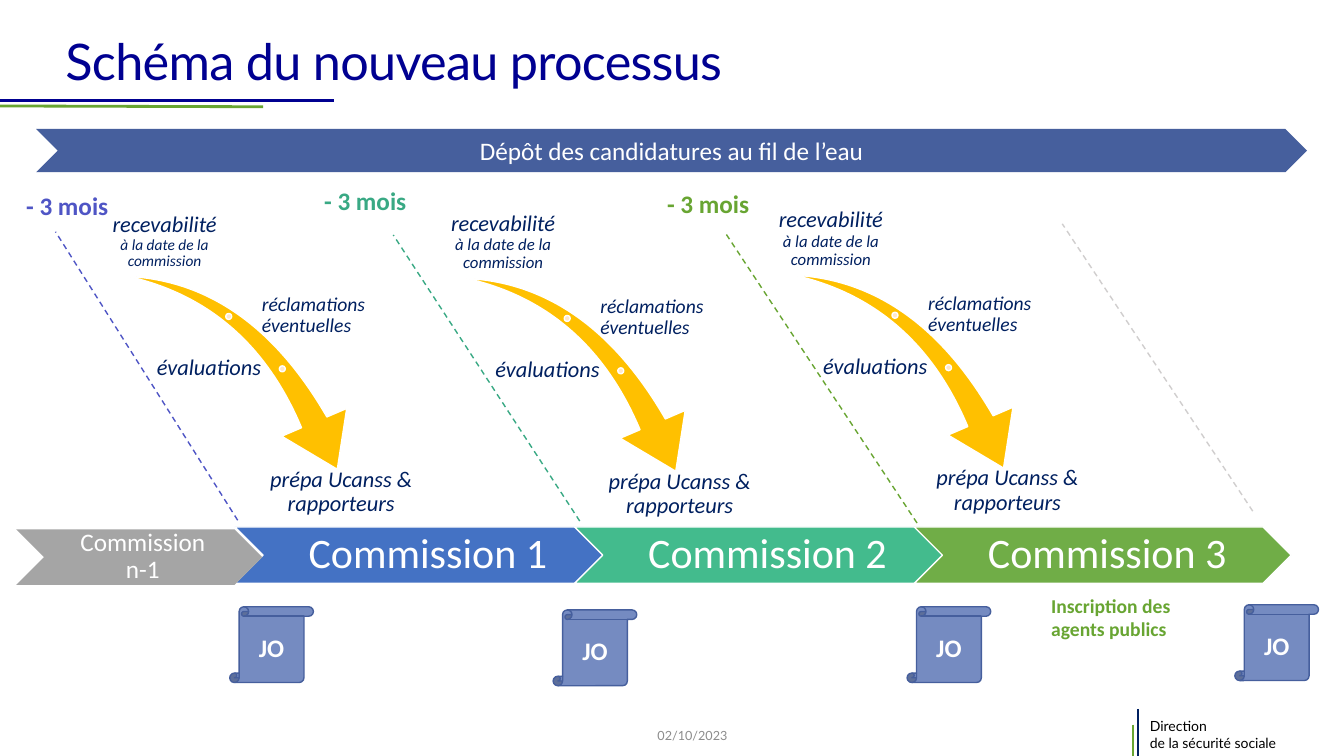
import dataclasses

import lxml.etree
import pptx
import pptx.dml.color
import pptx.enum.dml
import pptx.enum.shapes
import pptx.enum.text
import pptx.oxml.ns
import pptx.util

Cm = pptx.util.Cm
Pt = pptx.util.Pt
SHAPE = pptx.enum.shapes.MSO_SHAPE
ALIGN = pptx.enum.text.PP_ALIGN
ANCHOR = pptx.enum.text.MSO_ANCHOR


@dataclasses.dataclass(frozen=True)
class Theme:
    heading_font: str = "Lato"
    body_font: str = "Calibri"
    white: str = "FFFFFF"
    black: str = "000000"
    title: str = "000091"
    navy: str = "002060"
    green: str = "68A532"
    indigo: str = "4F55C5"
    teal: str = "39A984"
    pale_grey: str = "D0CECE"
    date_grey: str = "8C8C8C"
    past_grey: str = "A5A5A5"
    banner: str = "465F9D"
    scroll: str = "758BC1"
    swoosh: str = "FFC000"
    dot: str = "FFE8CC"
    commissions: tuple = ("4472C4", "43BB8D", "70AD47")
    title_size: float = 36
    commission_size: float = 30
    label_size: float = 18
    step_size: float = 16
    note_size: float = 14
    footer_size: float = 10
    date_size: float = 9


def rgb(value):
    return pptx.dml.color.RGBColor.from_string(value)


class Board:
    """Draws on one page, or on a group of it; all lengths are in centimetres."""

    def __init__(self, theme, page, shapes=None):
        self.theme = theme
        self.page = page
        self.shapes = shapes or page.shapes

    def group(self):
        return Board(self.theme, self.page, self.page.shapes.add_group_shape().shapes)

    def fill_text(self, shape, paragraphs, color, align=ALIGN.LEFT, anchor=ANCHOR.TOP,
                  insets=(0.25, 0.13, 0.25, 0.13), spacing=None, font=None,
                  bold=None, italic=None):
        """Fill a shape with paragraphs, each a list of (text, size) runs."""
        frame = shape.text_frame
        frame.word_wrap = True
        frame.auto_size = pptx.enum.text.MSO_AUTO_SIZE.NONE
        frame.vertical_anchor = anchor
        (frame.margin_left, frame.margin_top,
         frame.margin_right, frame.margin_bottom) = map(Cm, insets)
        for index, runs in enumerate(paragraphs):
            para = frame.add_paragraph() if index else frame.paragraphs[0]
            para.alignment = align
            para.line_spacing = spacing
            for text, size in runs:
                span = para.add_run()
                span.text = text
                span.font.name = font or self.theme.body_font
                span.font.size = Pt(size)
                span.font.bold = bold
                span.font.italic = italic
                span.font.color.rgb = rgb(color)

    def title(self, text, *place):
        box = self.page.shapes.title
        box.left, box.top, box.width, box.height = map(Cm, place)
        self.fill_text(box, [[(text, self.theme.title_size)]], self.theme.title,
                       anchor=ANCHOR.MIDDLE, spacing=0.9, font=self.theme.heading_font)
        box.text_frame.paragraphs[0].runs[0].font._element.set("spc", "-50")

    def text(self, place, paragraphs, color, **style):
        box = self.shapes.add_textbox(*map(Cm, place))
        self.fill_text(box, paragraphs, color, **style)

    def shape(self, kind, place, fill, outline=None):
        shape = self.shapes.add_shape(kind, *map(Cm, place))
        shape.shadow.inherit = False
        shape.fill.solid()
        shape.fill.fore_color.rgb = rgb(fill)
        if outline:
            shape.line.color.rgb = rgb(outline)
            shape.line.width = Pt(1)
        else:
            shape.line.fill.background()
        return shape

    def line(self, ends, color, width=1, dashed=False):
        connector = self.shapes.add_connector(
            pptx.enum.shapes.MSO_CONNECTOR.STRAIGHT, *map(Cm, ends))
        connector.line.color.rgb = rgb(color)
        connector.line.width = Pt(width)
        if dashed:
            connector.line.dash_style = pptx.enum.dml.MSO_LINE.DASH
        lxml.etree.SubElement(connector._element.spPr, pptx.oxml.ns.qn("a:effectLst"))

    def chevron(self, place, label, size, fill, outline=None,
                insets=(0.33, 0.1, 0.1, 0.1), spacing=0.9):
        shape = self.shape(SHAPE.CHEVRON, place, fill, outline)
        self.fill_text(shape, [[(label, size)]], self.theme.white, align=ALIGN.CENTER,
                       anchor=ANCHOR.MIDDLE, insets=insets, spacing=spacing)

    def scroll(self, left, top):
        shape = self.shape(SHAPE.VERTICAL_SCROLL, (left, top, 2.11, 1.91),
                           self.theme.scroll, self.theme.banner)
        self.fill_text(shape, [[("JO", self.theme.label_size)]], self.theme.white,
                       align=ALIGN.CENTER, anchor=ANCHOR.MIDDLE, bold=True)

    def preparation(self, left, top, detail_size):
        """Swoosh arrow with the four steps that lead to a commission."""
        theme = self.theme
        part = self.group()
        arrow = part.shape(SHAPE.SWOOSH_ARROW, (left, top, 6.17, 4.32),
                           theme.swoosh, theme.white)
        arrow.adjustments[0], arrow.adjustments[1] = 0.16, 0.31
        arrow.rotation = 73.3
        for across, down in ((2.59, 0.76), (3.94, 2.08)):
            part.shape(SHAPE.OVAL, (left + across, top + down, 0.15, 0.15),
                       theme.dot, theme.white)
        steps = (
            (-0.41, -1.42, 2.92, ALIGN.CENTER, ANCHOR.BOTTOM,
             [("recevabilité ", theme.step_size),
              ("à la date de la commission", detail_size)]),
            (3.45, 0.25, 4.01, ALIGN.LEFT, ANCHOR.MIDDLE,
             [("réclamations éventuelles", theme.note_size)]),
            (-0.41, 1.57, 3.94, ALIGN.RIGHT, ANCHOR.MIDDLE,
             [("évaluations", theme.step_size)]),
            (3.53, 4.6, 3.94, ALIGN.CENTER, ANCHOR.TOP,
             [("prépa Ucanss & rapporteurs", theme.step_size)]),
        )
        for across, down, width, align, anchor, runs in steps:
            part.text((left + across, top + down, width, 1.14), [runs], theme.navy,
                      align=align, anchor=anchor, insets=(0.05,) * 4,
                      spacing=0.9, italic=True)


def main():
    theme = Theme()
    deck = pptx.Presentation()
    deck.slide_width, deck.slide_height = Cm(33.87), Cm(19.05)
    page = deck.slides.add_slide(deck.slide_layouts[5])
    board = Board(theme, page)

    board.text((28.73, 18.01, 4.83, 0.99),
               [[("Direction", theme.footer_size)],
                [("de la sécurité sociale", theme.footer_size)]],
               theme.black, anchor=ANCHOR.MIDDLE, font=theme.heading_font)
    board.line((0, 2.54, 8.41, 2.54), theme.title, 2)
    board.line((0, 2.67, 6.63, 2.69), theme.green, 2)
    board.line((28.55, 18.26, 28.55, 19.05), theme.green, 1.5)
    board.line((28.68, 17.86, 28.68, 19.05), theme.navy, 1.5)
    board.text((13.64, 18.03, 7.62, 1.02), [[("02/10/2023", theme.date_size)]],
               theme.date_grey, align=ALIGN.CENTER, anchor=ANCHOR.MIDDLE,
               font=theme.heading_font)
    board.title("Schéma du nouveau processus", 1.4, 0.71, 31.06, 1.8)

    commissions = board.group()
    for index, fill in enumerate(theme.commissions):
        commissions.chevron((5.92 + 8.56 * index, 13.28, 9.5, 1.42),
                            f"Commission {index + 1}", theme.commission_size,
                            fill, theme.white)
    board.chevron((0.41, 13.34, 6.2, 1.4), "Commission n-1", theme.label_size,
                  theme.past_grey, insets=(0.43, 0.1, 0.25, 0.1))
    board.chevron((0.91, 3.25, 32.03, 1.09), "Dépôt des candidatures au fil de l’eau",
                  theme.label_size, theme.banner, insets=(0.25, 0.13, 0.25, 0.13),
                  spacing=None)

    deadlines = (
        (theme.indigo, (0.41, 4.67), (5.99, 13.11, 1.4, 5.84)),
        (theme.teal, (7.92, 4.55), (14.61, 13.13, 9.91, 5.92)),
        (theme.green, (16.56, 4.62), (23.11, 13.18, 18.26, 5.84)),
    )
    for color, corner, ends in deadlines:
        board.line(ends, color, dashed=True)
        board.text((*corner, 3.35, 1.02), [[("- 3 mois", theme.label_size)]],
                   color, bold=True)
    board.line((31.57, 12.88, 26.77, 5.64), theme.pale_grey, dashed=True)

    for corner in ((5.79, 15.29), (13.94, 15.37), (22.86, 15.29), (31.12, 15.24)):
        board.scroll(*corner)
    for left, top, detail_size in ((3.1, 7.14, 11), (11.63, 7.19, 12), (19.89, 7.11, 12)):
        board.preparation(left, top, detail_size)
    board.text((26.24, 14.83, 3.63, 1.45),
               [[("Inscription des agents publics", theme.note_size)]],
               theme.green, bold=True)
    deck.save("out.pptx")


if __name__ == "__main__":
    main()
